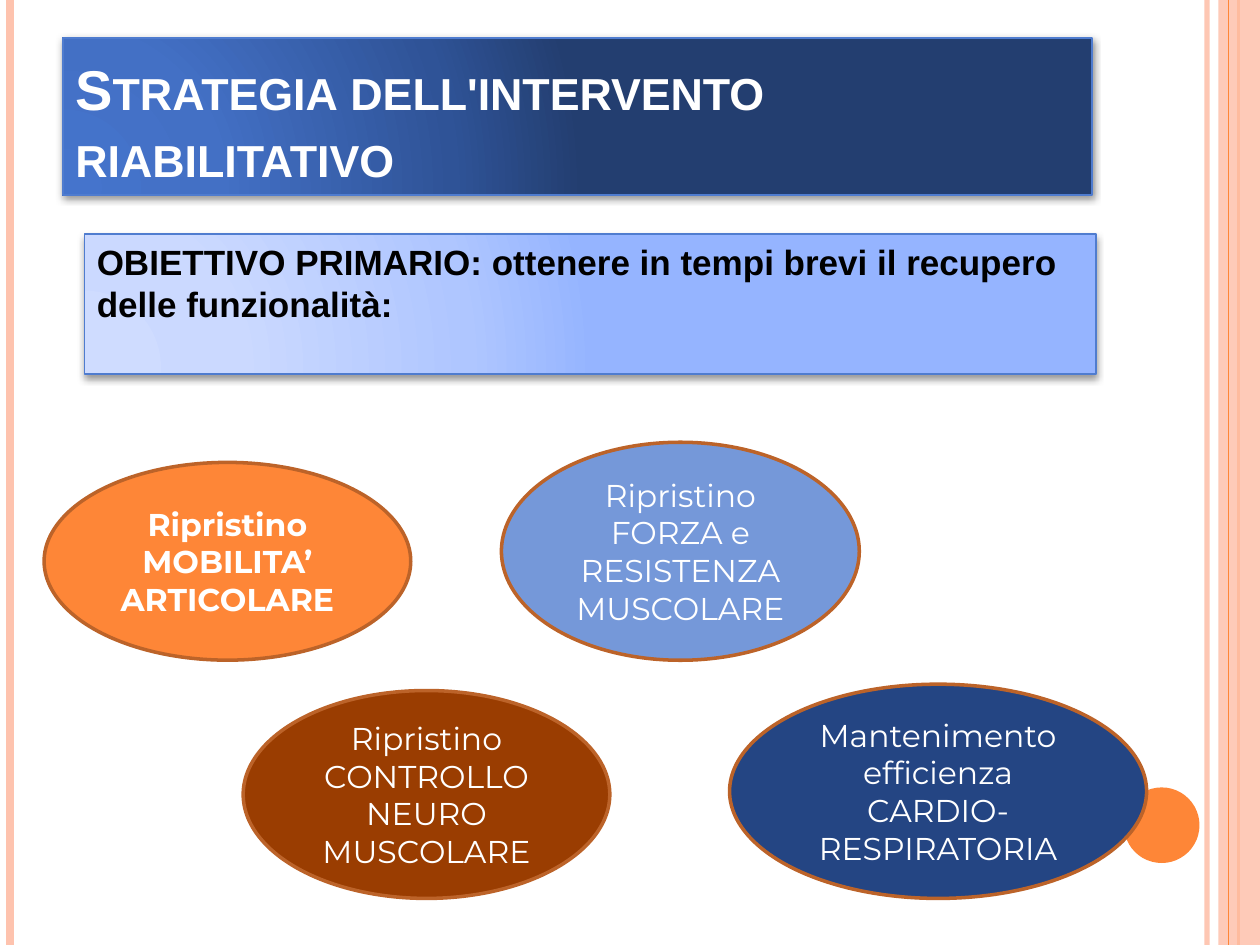
import pptx
import pptx.dml.color
import pptx.enum.shapes
import pptx.enum.text
import pptx.oxml
import pptx.oxml.ns
import pptx.util
from lxml import etree

WIDTH = pptx.util.Inches(10)
HEIGHT = pptx.util.Inches(7.5)
COLORS = {
    "white": "FFFFFF", "black": "000000", "peach": "FEC3AE", "orange": "FE8637",
    "rust": "BC6329", "brown": "9A3D01", "sky": "7598D9", "navy": "244583",
    "frame": "4F7CCF",
}
TITLE_GRADIENT = ["4574CC", "4370C5", "2F5397", "233E70"]
GOAL_GRADIENT = ["CFDCFF", "CBD9FF", "AFC6FF", "95B4FF"]
STOPS = [0, 30, 75, 100]
SHAPES = pptx.enum.shapes.MSO_SHAPE
ANCHOR = pptx.enum.text.MSO_ANCHOR
ALIGN = pptx.enum.text.PP_ALIGN


def rgb(name):
    return pptx.dml.color.RGBColor.from_string(COLORS[name])


def across(percent):
    return round(WIDTH * percent / 100)


def down(percent):
    return round(HEIGHT * percent / 100)


def parse_drawing(xml):
    return pptx.oxml.parse_xml(xml.replace(">", f' {pptx.oxml.ns.nsdecls("a")}>', 1))


def set_opacity(element, percent):
    color = element.find(".//" + pptx.oxml.ns.qn("a:srgbClr"))
    etree.SubElement(color, pptx.oxml.ns.qn("a:alpha")).set("val", str(percent * 1000))


def add_stripe(slide, left, color, weight, opacity=100):
    stripe = slide.shapes.add_connector(
        pptx.enum.shapes.MSO_CONNECTOR.STRAIGHT, across(left), 0, across(left), HEIGHT)
    stripe.line.color.rgb = rgb(color)
    stripe.line.width = pptx.util.Pt(weight)
    properties = stripe._element.spPr
    if opacity < 100:
        set_opacity(properties, opacity)
    properties.append(parse_drawing("<a:effectLst></a:effectLst>"))


def add_figure(slide, kind, area, fill=None, outline=None, weight=1):
    left, top, width, height = area
    figure = slide.shapes.add_shape(
        kind, across(left), down(top), across(width), down(height))
    figure.shadow.inherit = False
    if fill:
        figure.fill.solid()
        figure.fill.fore_color.rgb = rgb(fill)
    if outline:
        figure.line.color.rgb = rgb(outline)
        figure.line.width = pptx.util.Pt(weight)
    else:
        figure.line.fill.background()
    return figure


def add_text(figure, paragraphs, size, font, color, anchor, align, bold=False):
    frame = figure.text_frame
    frame.word_wrap = True
    frame.vertical_anchor = anchor
    for index, wording in enumerate(paragraphs):
        paragraph = frame.paragraphs[0] if index == 0 else frame.add_paragraph()
        paragraph.alignment = align
        run = paragraph.add_run()
        run.text = wording
        run.font.size = pptx.util.Pt(size)
        run.font.name = font
        run.font.bold = bold
        run.font.color.rgb = rgb(color)


def add_banner(slide, area, gradient, shadow_opacity, shadow_distance):
    banner = add_figure(slide, SHAPES.RECTANGLE, area, outline="frame")
    stops = "".join(
        f'<a:gs pos="{stop * 1000}"><a:srgbClr val="{color}"/></a:gs>'
        for stop, color in zip(STOPS, gradient))
    properties = banner._element.spPr
    properties.find(pptx.oxml.ns.qn("a:prstGeom")).addnext(parse_drawing(
        f'<a:gradFill rotWithShape="1"><a:gsLst>{stops}</a:gsLst><a:path path="circle">'
        '<a:fillToRect l="5000" t="100000" r="120000" b="10000"/></a:path></a:gradFill>'))
    effects = properties.find(pptx.oxml.ns.qn("a:effectLst"))
    effects.append(parse_drawing(
        f'<a:outerShdw blurRad="{pptx.util.Pt(4)}" dist="{pptx.util.Pt(shadow_distance)}" '
        f'dir="5400000" rotWithShape="0"><a:srgbClr val="{COLORS["black"]}">'
        f'<a:alpha val="{shadow_opacity * 1000}"/></a:srgbClr></a:outerShdw>'))
    return banner


def add_recovery(slide, area, fill, paragraphs, bold=False):
    recovery = add_figure(slide, SHAPES.OVAL, area, fill, "rust", 2)
    add_text(recovery, paragraphs, 18, "Montserrat", "white",
             ANCHOR.MIDDLE, ALIGN.CENTER, bold)


def add_decoration(slide):
    add_stripe(slide, 95.8, "peach", 3, 93)
    add_stripe(slide, 0.8, "peach", 4.5)
    add_stripe(slide, 98.3, "orange", 1.5)
    side_band = add_figure(slide, SHAPES.RECTANGLE, (96.7, 0, 3.3, 100), "peach")
    set_opacity(side_band._element.spPr, 87)
    add_stripe(slide, 97.5, "orange", 0.75)
    add_figure(slide, SHAPES.OVAL, (89.2, 83.33, 6, 8), "orange")


def main():
    deck = pptx.Presentation()
    deck.slide_width, deck.slide_height = WIDTH, HEIGHT
    slide = deck.slides.add_slide(deck.slide_layouts[6])
    slide.background.fill.solid()
    slide.background.fill.fore_color.rgb = rgb("white")
    add_decoration(slide)

    title = add_banner(slide, (5, 4, 81.7, 16.67), TITLE_GRADIENT, 42, 1.6)
    add_text(title, ["Strategia dell'intervento riabilitativo"], 32, "Arial", "white",
             ANCHOR.BOTTOM, ALIGN.LEFT, True)
    title_run = title.text_frame.paragraphs[0].runs[0]
    title_run.font._element.set("cap", "small")

    goal = add_banner(slide, (6.7, 24.8, 80.3, 14.8), GOAL_GRADIENT, 40, 2)
    add_text(goal, ["OBIETTIVO PRIMARIO: ottenere in tempi brevi il recupero delle funzionalità:"],
             20, "Arial", "black", ANCHOR.TOP, ALIGN.LEFT, True)

    add_recovery(slide, (3.5, 48.93, 29.1, 20.93), "orange",
                 ["Ripristino MOBILITA’", "ARTICOLARE"], True)
    add_recovery(slide, (39.8, 46.8, 28.4, 23.07), "sky",
                 ["Ripristino FORZA e RESISTENZA MUSCOLARE"])
    add_recovery(slide, (19.3, 73.07, 29.1, 22), "brown",
                 ["Ripristino CONTROLLO NEURO MUSCOLARE"])
    add_recovery(slide, (57.9, 72.4, 33.1, 22.67), "navy",
                 ["Mantenimento efficienza CARDIO-RESPIRATORIA"])
    deck.save("out.pptx")


if __name__ == "__main__":
    main()
